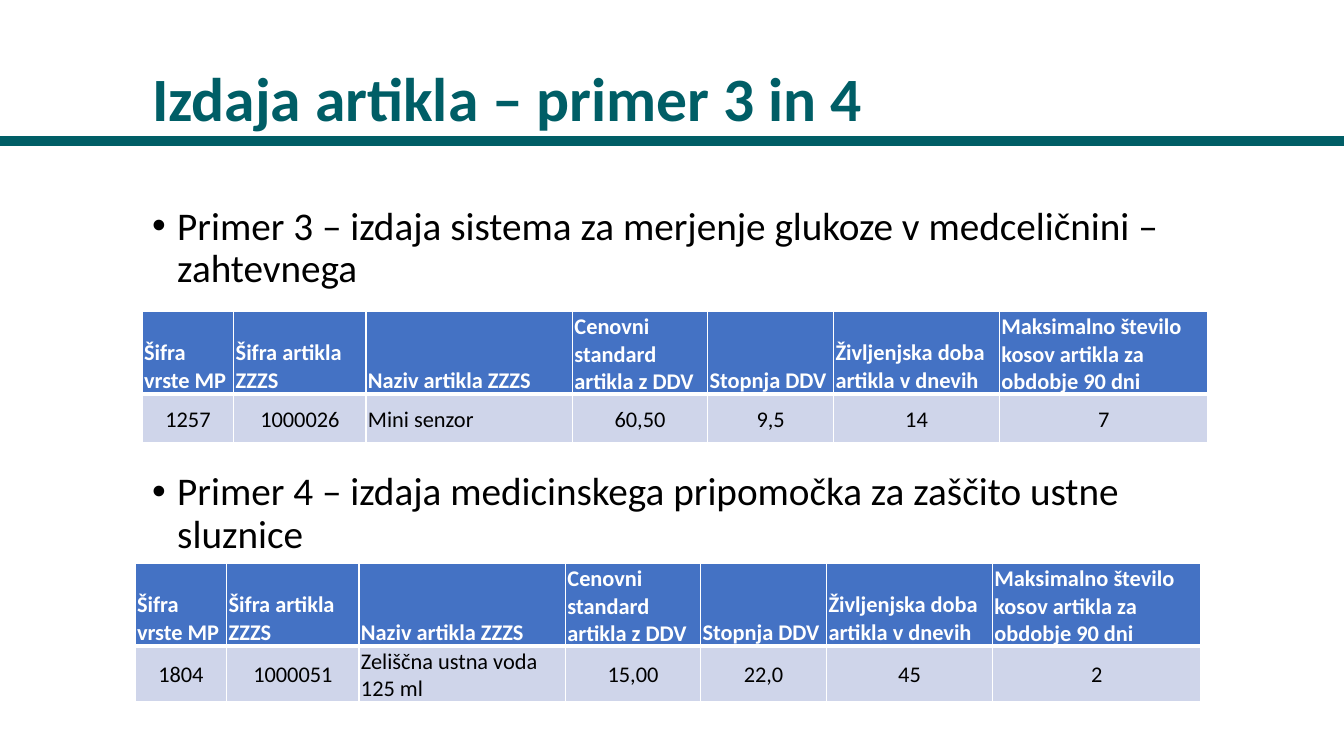
from lxml.etree import SubElement
from pptx import Presentation
from pptx.dml.color import RGBColor
from pptx.enum.shapes import MSO_CONNECTOR
from pptx.enum.text import MSO_ANCHOR, PP_ALIGN
from pptx.oxml.ns import qn
from pptx.util import Pt

TEAL = RGBColor(0x00, 0x5E, 0x66)
BLUE = RGBColor(0x44, 0x72, 0xC4)
PALE_BLUE = RGBColor(0xCF, 0xD5, 0xEA)
WHITE = RGBColor(0xFF, 0xFF, 0xFF)
BLACK = RGBColor(0x00, 0x00, 0x00)

HEADERS = [
    "Šifra vrste MP", "Šifra artikla ZZZS", "Naziv artikla ZZZS",
    "Cenovni standard artikla z DDV", "Stopnja DDV",
    "Življenjska doba artikla v dnevih",
    "Maksimalno število kosov artikla za obdobje 90 dni",
]
NAME_COLUMN = 2
COLUMN_WIDTHS = [65.5, 94.5, 147.5, 96.5, 90, 118.5, 149]
ROW_HEIGHTS = [55.5, 35]
EXAMPLES = [
    (101.5, 222.5, ["1257", "1000026", "Mini senzor", "60,50", "9,5", "14", "7"]),
    (96.5, 402.5, ["1804", "1000051", "Zeliščna ustna voda 125 ml", "15,00", "22,0", "45", "2"]),
]
BULLETS = [
    ("Primer 3 – izdaja sistema za merjenje glukoze v medceličnini – zahtevnega", None),
    ("Primer 4 – izdaja medicinskega pripomočka za zaščito ustne sluznice", 129),
]


def write_text(paragraph, text, size, color=BLACK, bold=False,
               align=PP_ALIGN.LEFT, line_spacing=None, space_before=None, bullet=False):
    paragraph.alignment = align
    if line_spacing:
        paragraph.line_spacing = line_spacing
    if space_before:
        paragraph.space_before = Pt(space_before)
    if bullet:
        properties = paragraph._p.get_or_add_pPr()
        properties.set("marL", str(Pt(18)))
        properties.set("indent", str(Pt(-18)))
        SubElement(properties, qn("a:buFont"), typeface="Arial")
        SubElement(properties, qn("a:buChar"), char="•")
    run = paragraph.add_run()
    run.text = text
    run.font.name = "Calibri"
    run.font.size = Pt(size)
    run.font.bold = bold
    run.font.color.rgb = color


def add_borders(cell, widths):
    """Draw white borders; widths are left, right, top and bottom in points."""
    for side, width in zip("LRTB", widths):
        line = SubElement(cell._tc.get_or_add_tcPr(), qn(f"a:ln{side}"), w=str(Pt(width)))
        fill = SubElement(line, qn("a:solidFill"))
        SubElement(fill, qn("a:srgbClr"), val=str(WHITE))


presentation = Presentation()
presentation.slide_width = Pt(960)
presentation.slide_height = Pt(540)
slide = presentation.slides.add_slide(presentation.slide_layouts[6])

rule = slide.shapes.add_connector(MSO_CONNECTOR.STRAIGHT, 0, Pt(100.8), Pt(960), Pt(100.8))
rule.line.color.rgb = TEAL
rule.line.width = Pt(7)
SubElement(rule._element.spPr, qn("a:effectLst"))

title = slide.shapes.add_textbox(Pt(101.5), Pt(11), Pt(793), Pt(89)).text_frame
title.word_wrap = True
title.vertical_anchor = MSO_ANCHOR.BOTTOM
write_text(title.paragraphs[0], "Izdaja artikla – primer 3 in 4", size=44,
           color=TEAL, bold=True, line_spacing=0.9)

body = slide.shapes.add_textbox(Pt(101.5), Pt(144), Pt(793), Pt(343)).text_frame
body.word_wrap = True
for index, (text, space_before) in enumerate(BULLETS):
    paragraph = body.add_paragraph() if index else body.paragraphs[0]
    write_text(paragraph, text, size=28, line_spacing=0.9,
               space_before=space_before, bullet=True)

for left, top, values in EXAMPLES:
    table = slide.shapes.add_table(
        2, len(HEADERS), Pt(left), Pt(top), Pt(sum(COLUMN_WIDTHS)), Pt(sum(ROW_HEIGHTS))).table
    for column, width in zip(table.columns, COLUMN_WIDTHS):
        column.width = Pt(width)
    for row, height in zip(table.rows, ROW_HEIGHTS):
        row.height = Pt(height)
    for row_index, texts in enumerate([HEADERS, values]):
        is_header = row_index == 0
        for column_index, text in enumerate(texts):
            cell = table.cell(row_index, column_index)
            add_borders(cell, [1, 1, 1, 3] if is_header else [1, 1, 3, 1])
            cell.fill.solid()
            cell.fill.fore_color.rgb = BLUE if is_header else PALE_BLUE
            cell.margin_left = cell.margin_right = cell.margin_top = Pt(1.4)
            cell.margin_bottom = 0
            cell.vertical_anchor = MSO_ANCHOR.BOTTOM if is_header else MSO_ANCHOR.MIDDLE
            left_aligned = is_header or column_index == NAME_COLUMN
            write_text(cell.text_frame.paragraphs[0], text, size=16,
                       color=WHITE if is_header else BLACK, bold=is_header,
                       align=PP_ALIGN.LEFT if left_aligned else PP_ALIGN.CENTER)

presentation.save("out.pptx")
